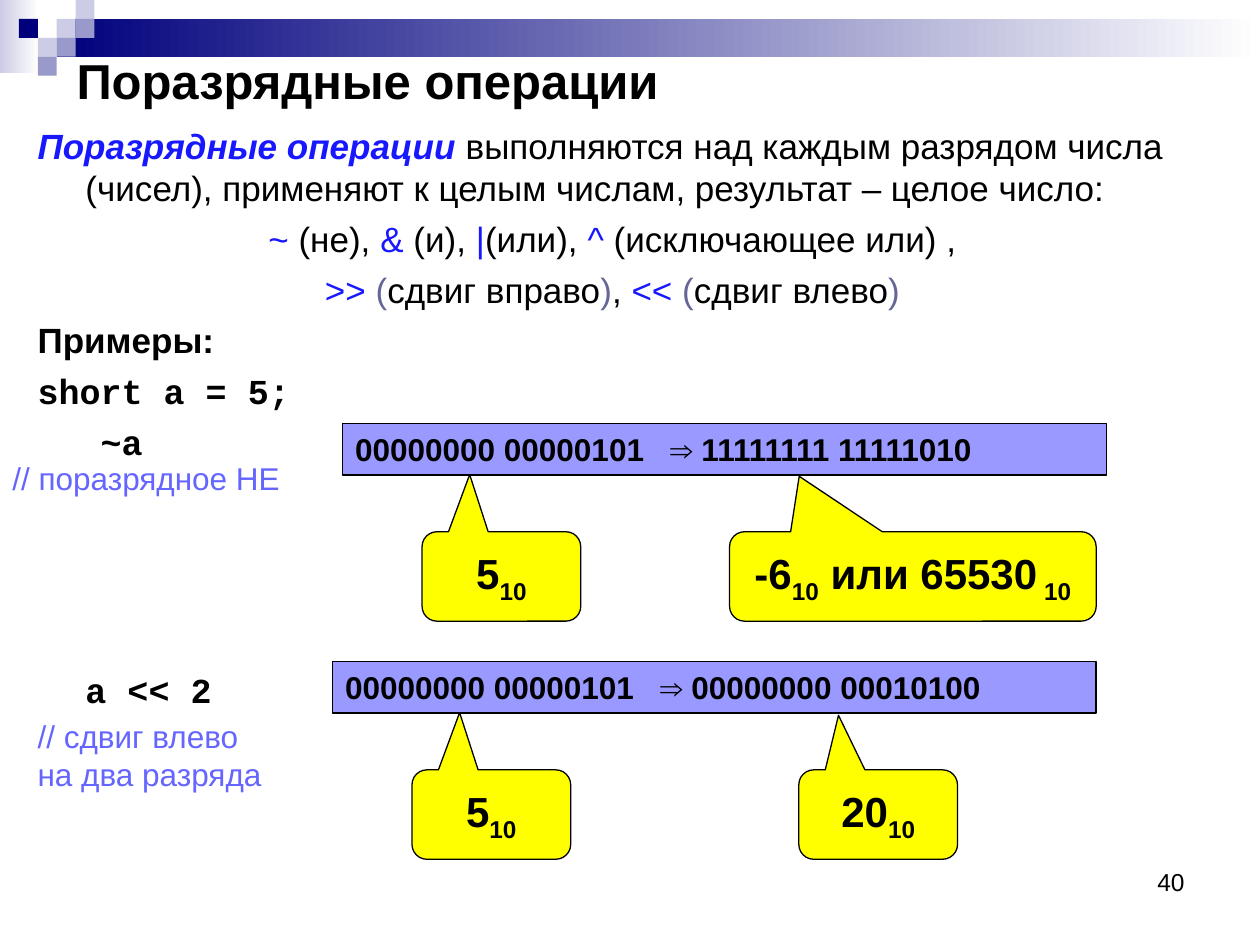
import pptx
import pptx.dml.color
import pptx.enum.shapes
import pptx.enum.text
import pptx.oxml.ns
import pptx.util
from lxml import etree

Inches = pptx.util.Inches
Pt = pptx.util.Pt
SHAPE = pptx.enum.shapes.MSO_SHAPE
ALIGN = pptx.enum.text.PP_ALIGN
ANCHOR = pptx.enum.text.MSO_ANCHOR

COLORS = {
    "black": "000000", "navy": "00007D", "pale": "CCCCE6", "mid": "9999CC",
    "white": "FFFFFF", "term": "1818FF", "bracket": "666699",
    "bits": "9999FF", "callout": "FFFF00", "comment": "6565FF",
}


def rgb(name):
    return pptx.dml.color.RGBColor.from_string(COLORS[name])


def add_run(paragraph, text, size, color="black", bold=False, italic=False,
            font="Arial", subscript=False):
    run = paragraph.add_run()
    run.text = text
    run.font.name = font
    run.font.size = Pt(size)
    run.font.bold = bold
    run.font.italic = italic
    run.font.color.rgb = rgb(color)
    if subscript:
        run._r.get_or_add_rPr().set("baseline", "-25000")


def add_text_box(slide, box, anchor=ANCHOR.TOP):
    frame = slide.shapes.add_textbox(*map(Inches, box)).text_frame
    frame.word_wrap = True
    frame.vertical_anchor = anchor
    return frame


def add_filled(slide, kind, box, color, outlined=False):
    shape = slide.shapes.add_shape(kind, *map(Inches, box))
    shape.shadow.inherit = False
    shape.fill.solid()
    shape.fill.fore_color.rgb = rgb(color)
    if outlined:
        shape.line.color.rgb = rgb("black")
        shape.line.width = Pt(0.75)
    else:
        shape.line.fill.background()
    return shape


def add_banner(slide, left, top):
    """Gradient bars with the mosaic of small squares over them."""
    bars = [((0, 0, 0.31, 0.58), "pale"), ((0.45, 0.15, 9.55, 0.3), "navy")]
    for (x, y, width, height), start in bars:
        bar = add_filled(slide, SHAPE.RECTANGLE, (left + x, top + y, width, height), start)
        bar.fill.gradient()
        bar.fill.gradient_angle = 0
        for stop, color in zip(bar.fill.gradient_stops, (start, "white")):
            stop.color.rgb = rgb(color)
    side = 0.15
    squares = [(3, 1, "pale"), (4, 0, "pale"), (4, 1, "mid"), (2, 2, "pale"),
               (1, 1, "navy"), (3, 2, "mid"), (2, 3, "mid")]
    for column, row, color in squares:
        add_filled(slide, SHAPE.RECTANGLE,
                   (left + column * side, top + row * side, side, side), color)


def add_title(slide, box):
    frame = add_text_box(slide, box, ANCHOR.MIDDLE)
    add_run(frame.paragraphs[0], "Поразрядные операции", 28, bold=True)


def add_body(slide, box):
    code = {"bold": True, "font": "Courier New"}
    term, bracket = {"color": "term"}, {"color": "bracket"}
    # alignment, left margin, first-line indent, space before, runs
    lines = [
        (ALIGN.LEFT, 0.38, -0.38, 0, [
            ("Поразрядные операции ", {"color": "term", "bold": True, "italic": True}),
            ("выполняются над каждым разрядом числа (чисел), применяют "
             "к целым числам, результат – целое число:", {})]),
        (ALIGN.CENTER, 0.38, -0.38, 5, [
            ("~", term), (" (не), ", {}), ("& ", term), ("(и), ", {}),
            ("|", term), ("(или), ", {}), ("^", term), (" (исключающее или) ,", {})]),
        (ALIGN.CENTER, 0.38, -0.38, 5, [
            (">> ", term), ("(", bracket), ("сдвиг вправо", {}), (")", bracket),
            (", ", {}), ("<< ", term), ("(", bracket), ("сдвиг влево", {}),
            (")", bracket)]),
        (ALIGN.LEFT, 0.38, -0.38, 5, [("Примеры:", {"bold": True})]),
        (ALIGN.LEFT, 0.38, -0.38, 5, [("short a = 5;", code)]),
        (ALIGN.LEFT, 0.81, -0.31, 5, [("~a", code)]),
        (ALIGN.LEFT, 0.38, 0, 118, [("a << 2", code)]),
    ]
    frame = add_text_box(slide, box)
    for index, (align, margin, indent, before, runs) in enumerate(lines):
        paragraph = frame.add_paragraph() if index else frame.paragraphs[0]
        paragraph.alignment = align
        paragraph.space_before = Pt(before)
        properties = paragraph._p.get_or_add_pPr()
        properties.set("marL", str(Inches(margin)))
        properties.set("indent", str(Inches(indent)))
        for text, style in runs:
            add_run(paragraph, text, 20, **style)


def add_bits(slide, box, before, after):
    bar = add_filled(slide, SHAPE.RECTANGLE, box, "bits", outlined=True)
    bar.text_frame.vertical_anchor = ANCHOR.MIDDLE
    paragraph = bar.text_frame.paragraphs[0]
    paragraph.alignment = ALIGN.LEFT
    tabs = etree.SubElement(paragraph._p.get_or_add_pPr(), pptx.oxml.ns.qn("a:tabLst"))
    etree.SubElement(tabs, pptx.oxml.ns.qn("a:tab"), pos=str(Inches(2.5)), algn="l")
    add_run(paragraph, f"{before}\t⇒ {after}", 18, bold=True)


def add_callout(slide, box, pointer, parts):
    """Parts alternate between normal text and subscript."""
    callout = add_filled(slide, SHAPE.ROUNDED_RECTANGULAR_CALLOUT, box, "callout",
                         outlined=True)
    for index, value in enumerate((*pointer, 0.167)):
        callout.adjustments[index] = value
    frame = callout.text_frame
    frame.word_wrap = True
    frame.vertical_anchor = ANCHOR.MIDDLE
    frame.paragraphs[0].alignment = ALIGN.CENTER
    for index, text in enumerate(parts):
        add_run(frame.paragraphs[0], text, 24, bold=True, subscript=index % 2 == 1)


def add_example(slide, box, result_bits, result_box, result_pointer, result_parts):
    """Bit bar with callouts for the operand and the result below it."""
    left, top, width, height = box
    offset, result_width = result_box
    callout_top, callout_height = top + 0.86, 0.71
    add_bits(slide, box, "00000000 00000101", result_bits)
    add_callout(slide, (left + 0.63, callout_top, 1.26, callout_height),
                (-0.2, -1.14), ("5", "10"))
    add_callout(slide, (left + offset, callout_top, result_width, callout_height),
                result_pointer, result_parts)


def add_comment(slide, box, text):
    add_run(add_text_box(slide, box).paragraphs[0], text, 18, "comment")


def add_page_number(slide, box):
    paragraph = add_text_box(slide, box).paragraphs[0]
    paragraph.alignment = ALIGN.RIGHT
    add_run(paragraph, "40", 14)


def main():
    deck = pptx.Presentation()
    deck.slide_width, deck.slide_height = Inches(10), Inches(7.5)
    slide = deck.slides.add_slide(deck.slide_layouts[6])
    add_banner(slide, 0, 0)
    add_page_number(slide, (7.17, 6.83, 2.33, 0.52))
    add_title(slide, (0.51, 0.28, 9, 0.71))
    add_body(slide, (0.2, 0.94, 9.32, 6.27))
    add_example(slide, (2.64, 5.25, 6.06, 0.41), "00000000 00010100",
                (3.7, 1.26), (-0.25, -1.11), ("20", "10"))
    add_example(slide, (2.72, 3.36, 6.06, 0.41), "11111111 11111010",
                (3.07, 2.91), (-0.31, -1.12), ("-6", "10", " или 65530", " 10"))
    add_comment(slide, (0.2, 5.64, 2.05, 0.71), "// сдвиг влево на два разряда")
    add_comment(slide, (0, 3.59, 2.72, 0.4), "// поразрядное НЕ")
    deck.save("out.pptx")


if __name__ == "__main__":
    main()
